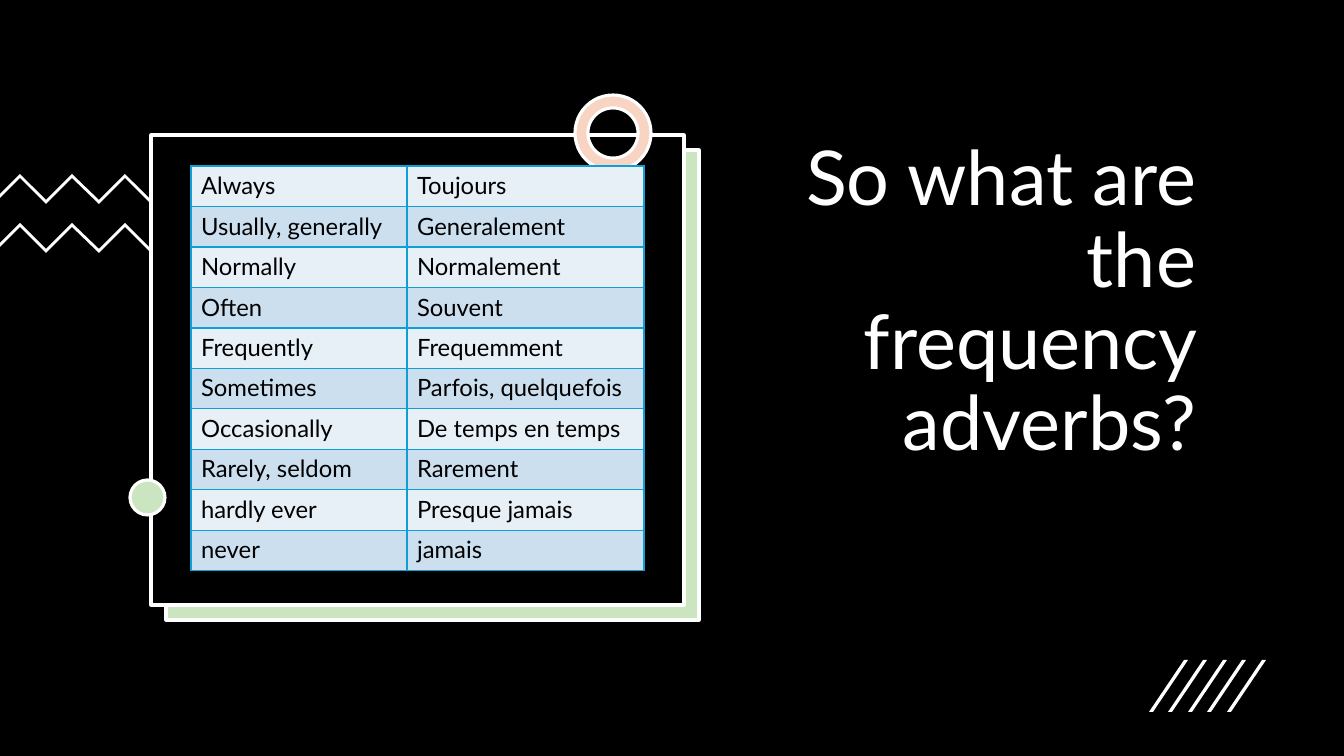
import pptx
import pptx.util
import pptx.dml.color
import pptx.enum.shapes
import pptx.enum.text
import pptx.oxml
import pptx.oxml.ns

RGB = pptx.dml.color.RGBColor
SHAPE = pptx.enum.shapes.MSO_SHAPE
ALIGN = pptx.enum.text.PP_ALIGN
ANCHOR = pptx.enum.text.MSO_ANCHOR

WIDTH, HEIGHT = 1344, 756
SCALE = 12192000 / WIDTH  # EMU in one px

BLACK = RGB(0x00, 0x00, 0x00)
WHITE = RGB(0xFF, 0xFF, 0xFF)
GREEN = RGB(0xCA, 0xE5, 0xC0)
PEACH = RGB(0xF8, 0xD4, 0xC2)
ROW_LIGHT = RGB(0xE7, 0xF0, 0xF7)
ROW_DARK = RGB(0xCC, 0xDF, 0xEF)
BORDER = RGB(0x0F, 0x9E, 0xD5)

FONT = "Lato"
OUTLINE_PT = 2.25

ADVERBS = [
    ("Always", "Toujours"),
    ("Usually, generally", "Generalement"),
    ("Normally", "Normalement"),
    ("Often", "Souvent"),
    ("Frequently", "Frequemment"),
    ("Sometimes", "Parfois, quelquefois"),
    ("Occasionally", "De temps en temps"),
    ("Rarely, seldom", "Rarement"),
    ("hardly ever", "Presque jamais"),
    ("never", "jamais"),
]


def px(n):
    return pptx.util.Emu(round(n * SCALE))


def write(tf, text, size, color, align=ALIGN.LEFT, spacing=1.0):
    p = tf.paragraphs[0]
    p.alignment = align
    p.line_spacing = spacing
    r = p.add_run()
    r.text = text
    r.font.name = FONT
    r.font.size = pptx.util.Pt(size)
    r.font.color.rgb = color


def paint(sp, fill, line=None):
    sp.shadow.inherit = False
    sp.fill.solid()
    sp.fill.fore_color.rgb = fill
    if line is None:
        sp.line.fill.background()
    else:
        sp.line.color.rgb = line
        sp.line.width = pptx.util.Pt(OUTLINE_PT)


def add_preset(s, kind, x, y, w, h, fill, line=None):
    sp = s.shapes.add_shape(kind, px(x), px(y), px(w), px(h))
    paint(sp, fill, line)
    return sp


def add_outline(s, points, fill):
    fb = s.shapes.build_freeform(*points[0], scale=SCALE)
    fb.add_line_segments(points[1:], close=True)
    paint(fb.convert_to_shape(), fill)


def add_zigzag(s, top):
    depth, thick = 26, 4
    teeth = [(20 + round(26.25 * i), top + depth * (i % 2)) for i in range(7)]
    lower = [(x, y + thick) for x, y in reversed(teeth)]
    right = [(206, top + 28), (203, top + 30)]
    left = [(0, top + 24), (0, top + 20)]
    add_outline(s, teeth + right + lower + left, WHITE)


def add_slashes(s, x, y, count):
    for i in range(count):
        left = x + round(19.4 * i)
        add_outline(s, [(left + 4, y + 52), (left, y + 52),
                        (left + 35, y), (left + 39, y)], WHITE)


def add_title(s, text, x, y, w, h):
    tf = s.shapes.add_textbox(px(x), px(y), px(w), px(h)).text_frame
    tf.word_wrap = True
    tf.vertical_anchor = ANCHOR.BOTTOM
    write(tf, text, size=54, color=WHITE, align=ALIGN.RIGHT, spacing=0.9)


def set_borders(cell, color):
    tc_pr = cell._tc.get_or_add_tcPr()
    for side in ("lnL", "lnR", "lnT", "lnB"):
        tc_pr.append(pptx.oxml.parse_xml(
            f'<a:{side} {pptx.oxml.ns.nsdecls("a")} w="12700"><a:solidFill>'
            f'<a:srgbClr val="{color}"/></a:solidFill></a:{side}>'))


def add_table(s, rows, x, y, widths, height):
    table = s.shapes.add_table(len(rows), len(widths), px(x), px(y),
                               px(sum(widths)), px(height)).table
    for column, width in zip(table.columns, widths):
        column.width = px(width)
    for i, words in enumerate(rows):
        table.rows[i].height = px(height / len(rows))
        for j, word in enumerate(words):
            cell = table.cell(i, j)
            set_borders(cell, BORDER)
            cell.fill.solid()
            cell.fill.fore_color.rgb = ROW_DARK if i % 2 else ROW_LIGHT
            write(cell.text_frame, word, size=17, color=BLACK)


def main():
    prs = pptx.Presentation()
    prs.slide_width, prs.slide_height = px(WIDTH), px(HEIGHT)
    s = prs.slides.add_slide(prs.slide_layouts[6])

    # Background and title
    add_preset(s, SHAPE.RECTANGLE, 0, 0, WIDTH, HEIGHT, BLACK)
    add_title(s, "So what are the frequency adverbs?", 742, 76, 464, 396)

    # Green backing, zigzags and black frame
    add_preset(s, SHAPE.RECTANGLE, 166, 150, 533, 470, GREEN, WHITE)
    for top in (174, 223):
        add_zigzag(s, top)
    add_preset(s, SHAPE.RECTANGLE, 151, 135, 533, 470, BLACK, WHITE)

    # Dot, ring and slashes
    add_preset(s, SHAPE.OVAL, 130, 480, 35, 35, GREEN, WHITE)
    ring = add_preset(s, SHAPE.DONUT, 575, 95, 76, 76, PEACH, WHITE)
    ring.adjustments[0] = 0.17
    add_slashes(s, 1149, 660, 5)

    # Adverb table
    add_table(s, ADVERBS, 191, 166, (216, 237), 405)

    prs.save("out.pptx")


if __name__ == "__main__":
    main()
